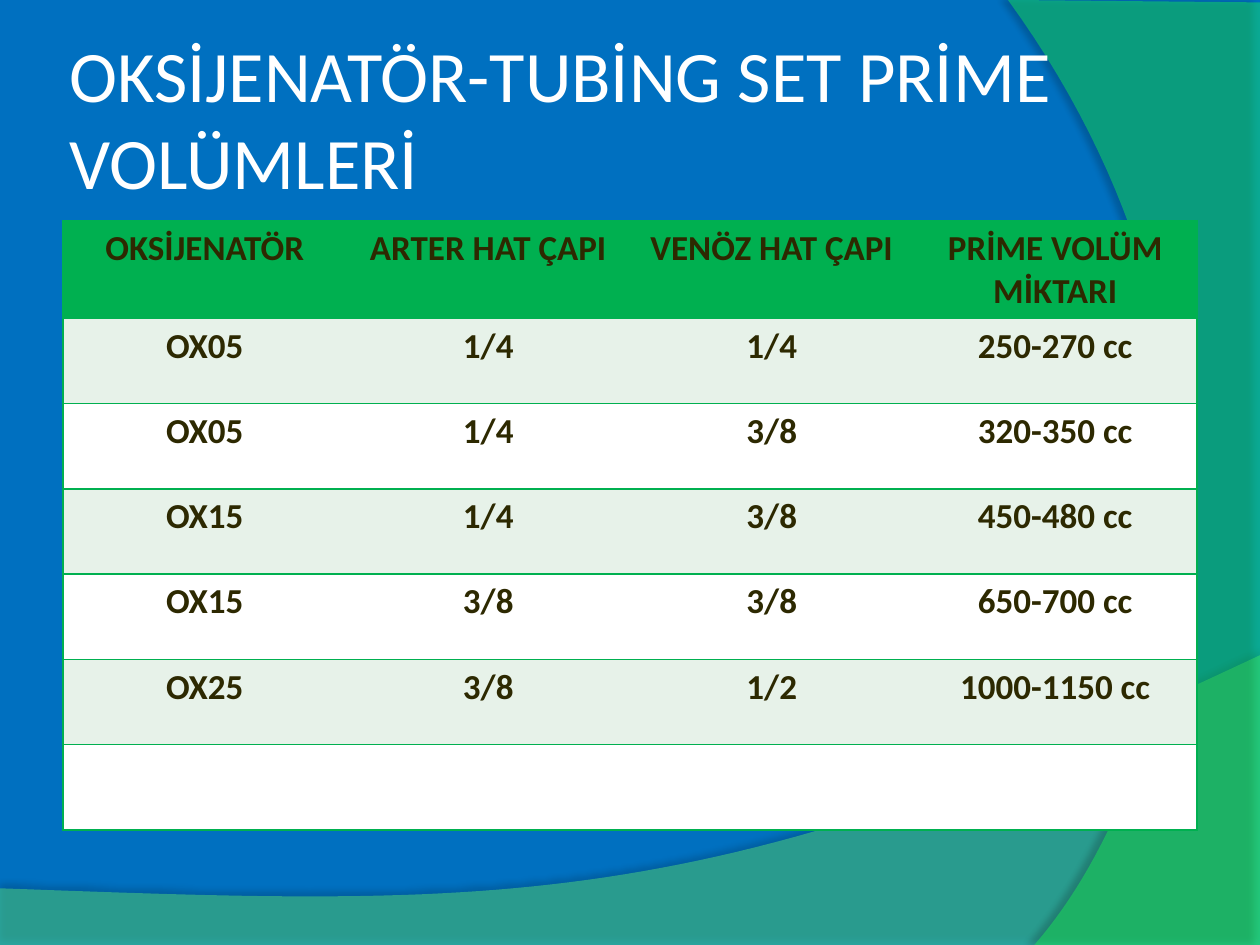
from lxml.etree import SubElement
from pptx import Presentation
from pptx.dml.color import RGBColor
from pptx.enum.text import MSO_ANCHOR, PP_ALIGN
from pptx.oxml import parse_xml
from pptx.oxml.ns import nsdecls, qn
from pptx.util import Pt

BLUE = RGBColor(0x00, 0x70, 0xC0)
MINT = RGBColor(0x5C, 0xE6, 0x79)
LIME = RGBColor(0x19, 0xFF, 0x50)
GREEN = RGBColor(0x00, 0xB0, 0x50)
PALE = RGBColor(0xE7, 0xF2, 0xE9)
WHITE = RGBColor(0xFF, 0xFF, 0xFF)
DARK = RGBColor(0x2D, 0x29, 0x01)
FONT = "Calibri"

ROWS = [
    ("OKSİJENATÖR", "ARTER HAT ÇAPI", "VENÖZ HAT ÇAPI", "PRİME VOLÜM MİKTARI"),
    ("OX05", "1/4", "1/4", "250-270 cc"),
    ("OX05", "1/4", "3/8", "320-350 cc"),
    ("OX15", "1/4", "3/8", "450-480 cc"),
    ("OX15", "3/8", "3/8", "650-700 cc"),
    ("OX25", "3/8", "1/2", "1000-1150 cc"),
    ("", "", "", ""),
]


def write(frame, text, size=20, color=DARK, bold=False, align=PP_ALIGN.LEFT):
    para = frame.paragraphs[0]
    para.alignment = align
    run = para.add_run()
    run.text = text
    font = run.font
    font.name, font.size, font.bold = FONT, Pt(size), bold
    font.color.rgb = color


def curve(a, b, c, d, steps=60):
    """Points along a cubic curve, start and end included."""
    dots = []
    for i in range(steps + 1):
        t = i / steps
        u = 1 - t
        dots.append(tuple(
            u**3 * p + 3 * u * u * t * q + 3 * u * t * t * r + t**3 * s
            for p, q, r, s in zip(a, b, c, d)))
    return dots


def wave(slide, box, dots, color, alpha, shade, drop, angle):
    """Translucent outline with a soft shadow; dots are relative to the box."""
    left, top = box
    dots = [(round(Pt(left + x)), round(Pt(top + y))) for x, y in dots]
    pen = slide.shapes.build_freeform(*dots[0], scale=1.0)
    pen.add_line_segments(dots[1:], close=True)
    shape = pen.convert_to_shape()
    shape.fill.solid()
    shape.fill.fore_color.rgb = color
    tint = shape.fill._xPr.find(qn("a:solidFill"))[0]
    SubElement(tint, qn("a:alpha"), val=str(alpha * 1000))
    shape.line.fill.background()
    shape._element.spPr.append(parse_xml(
        f'<a:effectLst {nsdecls("a")}><a:outerShdw blurRad="{Pt(4)}" '
        f'dist="{Pt(drop)}" dir="{angle * 60000}" algn="ctr" rotWithShape="0">'
        f'<a:srgbClr val="000000"><a:alpha val="{shade * 1000}"/></a:srgbClr>'
        '</a:outerShdw></a:effectLst>'))


def waves(slide):
    # Bottom wave
    edge = curve((720, 0), (402.5, 150.5), (281.5, 143.3), (0, 133.2))
    wave(slide, (0, 374.4), [(0, 166.3), (720, 166.3)] + edge,
         MINT, 45, 35, 3.5, 270)
    # Right wave
    edge = curve((15.1, 540), (97.2, 445.7), (157, 216), (0, 0))
    wave(slide, (576, 0), [(144, 1.4), (144, 540)] + edge,
         LIME, 40, 45, 4, 180)


def title(slide, left, top, width, height):
    frame = slide.shapes.add_textbox(
        Pt(left), Pt(top), Pt(width), Pt(height)).text_frame
    frame.word_wrap = True
    frame.vertical_anchor = MSO_ANCHOR.MIDDLE
    frame.margin_left = frame.margin_right = Pt(3.6)
    frame.margin_top = frame.margin_bottom = Pt(3.6)
    write(frame, "OKSİJENATÖR-TUBİNG SET PRİME VOLÜMLERİ",
          size=41.4, color=WHITE)


def border(cell, sides):
    """Green lines on the named sides, none on the others."""
    props = cell._tc.get_or_add_tcPr()
    for i, side in enumerate("LRTB"):
        paint = (f'<a:solidFill><a:srgbClr val="{GREEN}"/></a:solidFill>'
                 if side in sides else "<a:noFill/>")
        props.insert(i, parse_xml(
            f'<a:ln{side} {nsdecls("a")} w="{Pt(1)}">{paint}</a:ln{side}>'))


def volumes(slide, left, top, width, head, step):
    count = len(ROWS[0])
    height = head + step * (len(ROWS) - 1)
    table = slide.shapes.add_table(
        len(ROWS), count, Pt(left), Pt(top), Pt(width), Pt(height)).table
    for col in table.columns:
        col.width = Pt(width / count)
    for r, texts in enumerate(ROWS):
        table.rows[r].height = Pt(step if r else head)
        for c, text in enumerate(texts):
            cell = table.cell(r, c)
            cell.fill.solid()
            cell.fill.fore_color.rgb = (
                GREEN if r == 0 else PALE if r % 2 else WHITE)
            border(cell, "TB" + "L" * (c == 0) + "R" * (c == count - 1))
            if text:
                write(cell.text_frame, text, bold=True, align=PP_ALIGN.CENTER)


def main():
    deck = Presentation()
    deck.slide_width, deck.slide_height = Pt(720), Pt(540)
    slide = deck.slides.add_slide(deck.slide_layouts[6])
    slide.background.fill.solid()
    slide.background.fill.fore_color.rgb = BLUE
    waves(slide)
    title(slide, 36, 21.6, 588, 90)
    volumes(slide, 36, 126, 648, head=56, step=48.7)
    deck.save("out.pptx")


if __name__ == "__main__":
    main()
